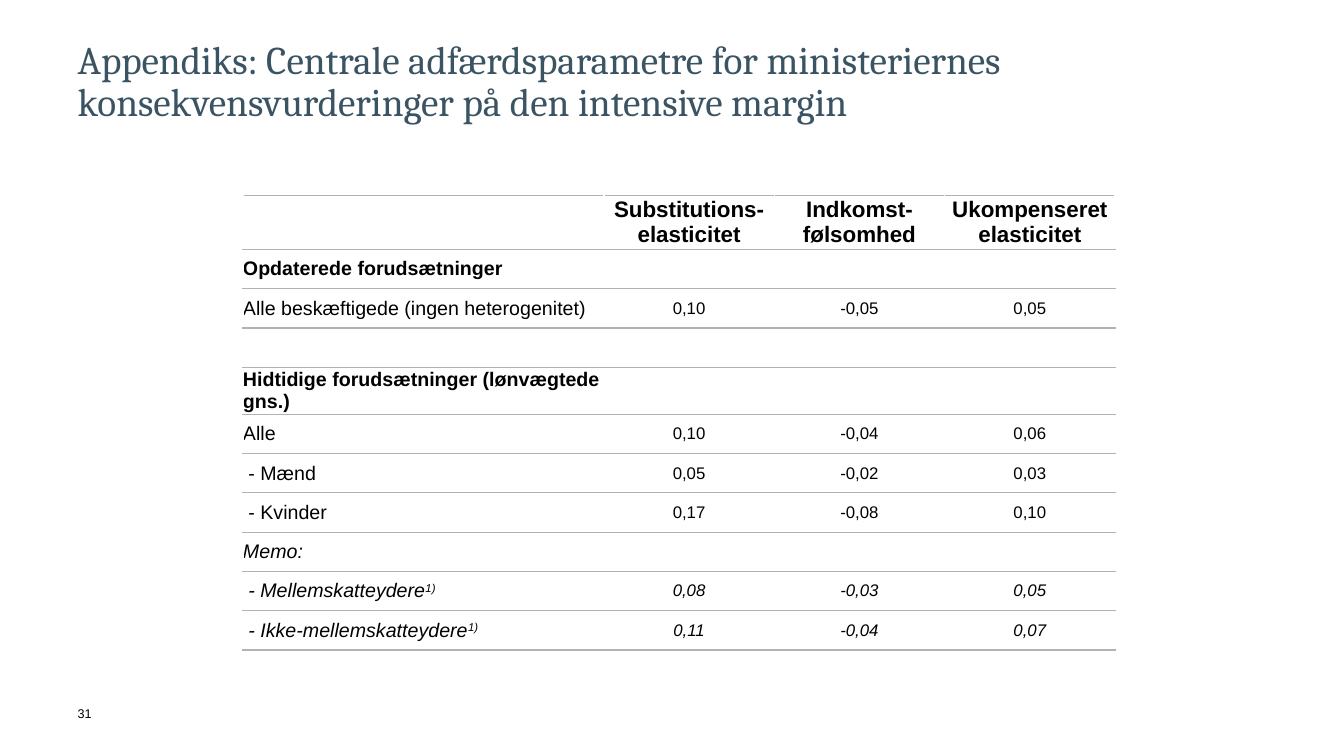
from lxml.etree import SubElement
from pptx import Presentation
from pptx.dml.color import RGBColor
from pptx.enum.text import MSO_ANCHOR as Anchor, PP_ALIGN as Align
from pptx.oxml.ns import qn
from pptx.util import Inches, Pt

WHITE = RGBColor(0xFF, 0xFF, 0xFF)
BLACK = RGBColor(0, 0, 0)
SLATE = RGBColor(0x3B, 0x54, 0x63)
RULE_GREY = RGBColor(0xB5, 0xB1, 0xB1)

TITLE = ("Appendiks: Centrale adfærdsparametre for ministeriernes "
         "konsekvensvurderinger på den intensive margin")
HEADINGS = ["", "Substitutions-\nelasticitet", "Indkomst-\nfølsomhed",
            "Ukompenseret\nelasticitet"]
NOTE_MARK = "1)"
BOLD, ITALIC = {"bold": True}, {"italic": True}
# Label, note mark, values, extra font settings
ROWS = [
    ("Opdaterede forudsætninger", "", [], BOLD),
    ("Alle beskæftigede (ingen heterogenitet)", "", ["0,10", "-0,05", "0,05"], {}),
    ("", "", [], {}),
    ("Hidtidige forudsætninger (lønvægtede gns.)", "", [], BOLD),
    ("Alle", "", ["0,10", "-0,04", "0,06"], {}),
    (" - Mænd", "", ["0,05", "-0,02", "0,03"], {}),
    (" - Kvinder", "", ["0,17", "-0,08", "0,10"], {}),
    ("Memo:", "", [], ITALIC),
    (" - Mellemskatteydere", NOTE_MARK, ["0,08", "-0,03", "0,05"], ITALIC),
    (" - Ikke-mellemskatteydere", NOTE_MARK, ["0,11", "-0,04", "0,07"], ITALIC),
]
COLUMN_WIDTHS = [3.58, 1.69, 1.69, 1.69]
HEADER_HEIGHT, ROW_HEIGHT = 0.42, 0.39


class SlideBuilder:
    font_name = "Arial"

    def __init__(self, page):
        self.page = page
        page.background.fill.solid()
        page.background.fill.fore_color.rgb = WHITE

    def span(self, para, words, size, color=BLACK, **font_values):
        run = para.add_run()
        run.text = words
        values = {"name": self.font_name, "size": Pt(size), **font_values}
        for name, value in values.items():
            setattr(run.font, name, value)
        run.font.color.rgb = color
        return run

    def text(self, words, left, top, width, height, size, right_inset=0.0,
             line_spacing=1.0, **font_values):
        box = self.page.shapes.add_textbox(*map(Inches, (left, top, width, height)))
        frame = box.text_frame
        values = {"word_wrap": True, "margin_left": 0, "margin_top": 0,
                  "margin_right": Inches(right_inset), "margin_bottom": 0,
                  "vertical_anchor": Anchor.TOP}
        for name, value in values.items():
            setattr(frame, name, value)
        para = frame.paragraphs[0]
        para.line_spacing = line_spacing
        self.span(para, words, size, **font_values)

    def table(self, left, top, widths, heights):
        """Add a plain table with a rule above and below every row."""
        size = (len(heights), len(widths))
        frame = (left, top, sum(widths), sum(heights))
        table = self.page.shapes.add_table(*size, *map(Inches, frame)).table
        table.first_row = table.horz_banding = False
        for column, width in zip(table.columns, widths):
            column.width = Inches(width)
        for row, height in zip(table.rows, heights):
            row.height = Inches(height)
        for cell in table.iter_cells():
            self.plain_cell(cell)
        return table

    def plain_cell(self, cell):
        for side in ("left", "top", "right", "bottom"):
            setattr(cell, f"margin_{side}", 0)
        cell.vertical_anchor = Anchor.MIDDLE
        properties = cell._tc.get_or_add_tcPr()
        for edge in ("a:lnT", "a:lnB"):
            line = SubElement(properties, qn(edge), w=str(Pt(1)))
            fill = SubElement(line, qn("a:solidFill"))
            SubElement(fill, qn("a:srgbClr"), val=str(RULE_GREY))
        cell.fill.background()

    def cell_text(self, cell, words, size, align, note="", **font_values):
        frame = cell.text_frame
        for index, line in enumerate(words.split("\n")):
            para = frame.add_paragraph() if index else frame.paragraphs[0]
            para.alignment = align
            if line:
                self.span(para, line, size, **font_values)
        if note:
            mark = self.span(para, note, size, **font_values)
            mark.font._element.set("baseline", "30000")


def main():
    deck = Presentation()
    deck.slide_width, deck.slide_height = Inches(13.33), Inches(7.5)
    builder = SlideBuilder(deck.slides.add_slide(deck.slide_layouts[6]))

    builder.text("31", 0.77, 7, 0.31, 0.3, 9)
    builder.text(TITLE, 0.77, 0.4, 11.8, 1.02, 28, right_inset=1.13,
                 line_spacing=0.9, name="Cambria", color=SLATE)

    heights = [HEADER_HEIGHT] + [ROW_HEIGHT] * len(ROWS)
    table = builder.table(2.41, 1.94, COLUMN_WIDTHS, heights)
    for column, heading in enumerate(HEADINGS):
        builder.cell_text(table.cell(0, column), heading, 16, Align.CENTER, **BOLD)
    for row, (label, note, values, style) in enumerate(ROWS, start=1):
        builder.cell_text(table.cell(row, 0), label, 14, Align.LEFT, note, **style)
        for column, value in enumerate(values, start=1):
            builder.cell_text(table.cell(row, column), value, 12, Align.CENTER, **style)

    deck.save("out.pptx")


if __name__ == "__main__":
    main()
